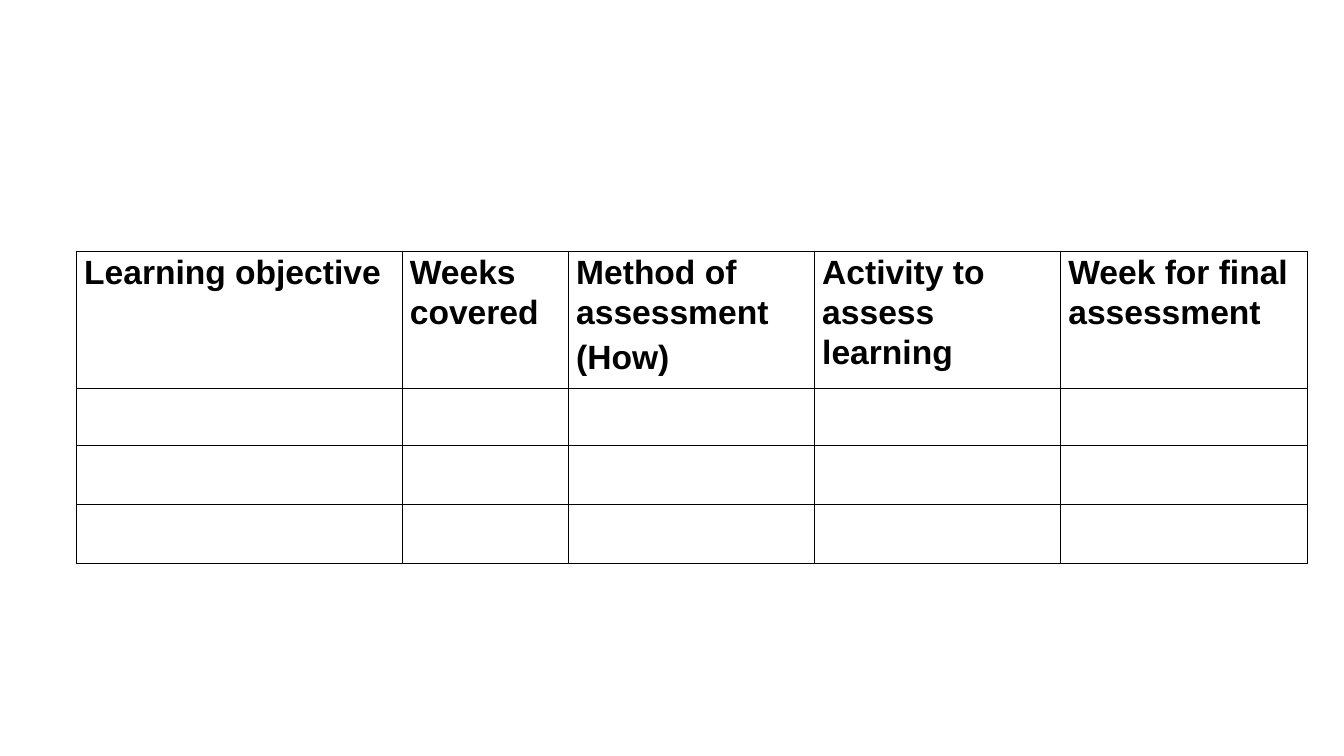
from dataclasses import dataclass

from lxml.etree import SubElement
from pptx import Presentation
from pptx.dml.color import RGBColor
from pptx.oxml.ns import qn
from pptx.util import Cm, Pt


@dataclass(frozen=True)
class Theme:
    ink: str = "000000"
    paper: str = "FFFFFF"
    font: str = "Arial"
    header_size: int = 48
    border_width: int = 1


THEME = Theme()
SLIDE_WIDTH, SLIDE_HEIGHT = 67.72, 38.1
TABLE_BOX = (3.86, 12.65, 62, 15.74)
COLUMN_WIDTHS = [16.41, 8.38] + [12.4] * 3
ROW_HEIGHTS = [6.93, 2.87, 2.97, 2.97]

# One list of paragraphs for each column
HEADERS = [
    ["Learning objective"],
    ["Weeks covered"],
    ["Method of assessment", "(How)"],
    ["Activity to assess learning"],
    ["Week for final assessment"],
]

CELL_FORMAT = {
    "margin_left": Cm(0.38),
    "margin_right": Cm(0.38),
    "margin_top": 0,
    "margin_bottom": 0,
}
PARAGRAPH_FORMAT = {"line_spacing": 1.07, "space_after": Pt(8)}
FONT_FORMAT = {"name": THEME.font, "size": Pt(THEME.header_size), "bold": True}


def apply_format(target, values):
    for name, value in values.items():
        setattr(target, name, value)


def format_cell(cell):
    """Give a cell thin borders on all sides, no fill and its margins."""
    properties = cell._tc.get_or_add_tcPr()
    for side in ("lnL", "lnR", "lnT", "lnB"):
        line = SubElement(properties, qn(f"a:{side}"), w=str(Pt(THEME.border_width)))
        fill = SubElement(line, qn("a:solidFill"))
        SubElement(fill, qn("a:srgbClr"), val=THEME.ink)
    cell.fill.background()
    apply_format(cell, CELL_FORMAT)


def write_header(cell, lines):
    cell.text = "\n".join(lines)
    for paragraph in cell.text_frame.paragraphs:
        apply_format(paragraph, PARAGRAPH_FORMAT)
        for run in paragraph.runs:
            apply_format(run.font, FONT_FORMAT)
            run.font.color.rgb = RGBColor.from_string(THEME.ink)


def add_assessment_table(slide, box):
    frame = slide.shapes.add_table(
        len(ROW_HEIGHTS), len(COLUMN_WIDTHS), *(Cm(length) for length in box)
    )
    table = frame.table
    apply_format(table, {"first_row": False, "horz_banding": False})

    # Grid
    for column, width in zip(table.columns, COLUMN_WIDTHS):
        column.width = Cm(width)
    for row, height in zip(table.rows, ROW_HEIGHTS):
        row.height = Cm(height)
    for cell in table.iter_cells():
        format_cell(cell)

    # Header row
    for cell, lines in zip(table.rows[0].cells, HEADERS):
        write_header(cell, lines)


def main():
    presentation = Presentation()
    presentation.slide_width = Cm(SLIDE_WIDTH)
    presentation.slide_height = Cm(SLIDE_HEIGHT)
    slide = presentation.slides.add_slide(presentation.slide_layouts[6])
    background = slide.background.fill
    background.solid()
    background.fore_color.rgb = RGBColor.from_string(THEME.paper)
    add_assessment_table(slide, TABLE_BOX)
    presentation.save("out.pptx")


if __name__ == "__main__":
    main()
